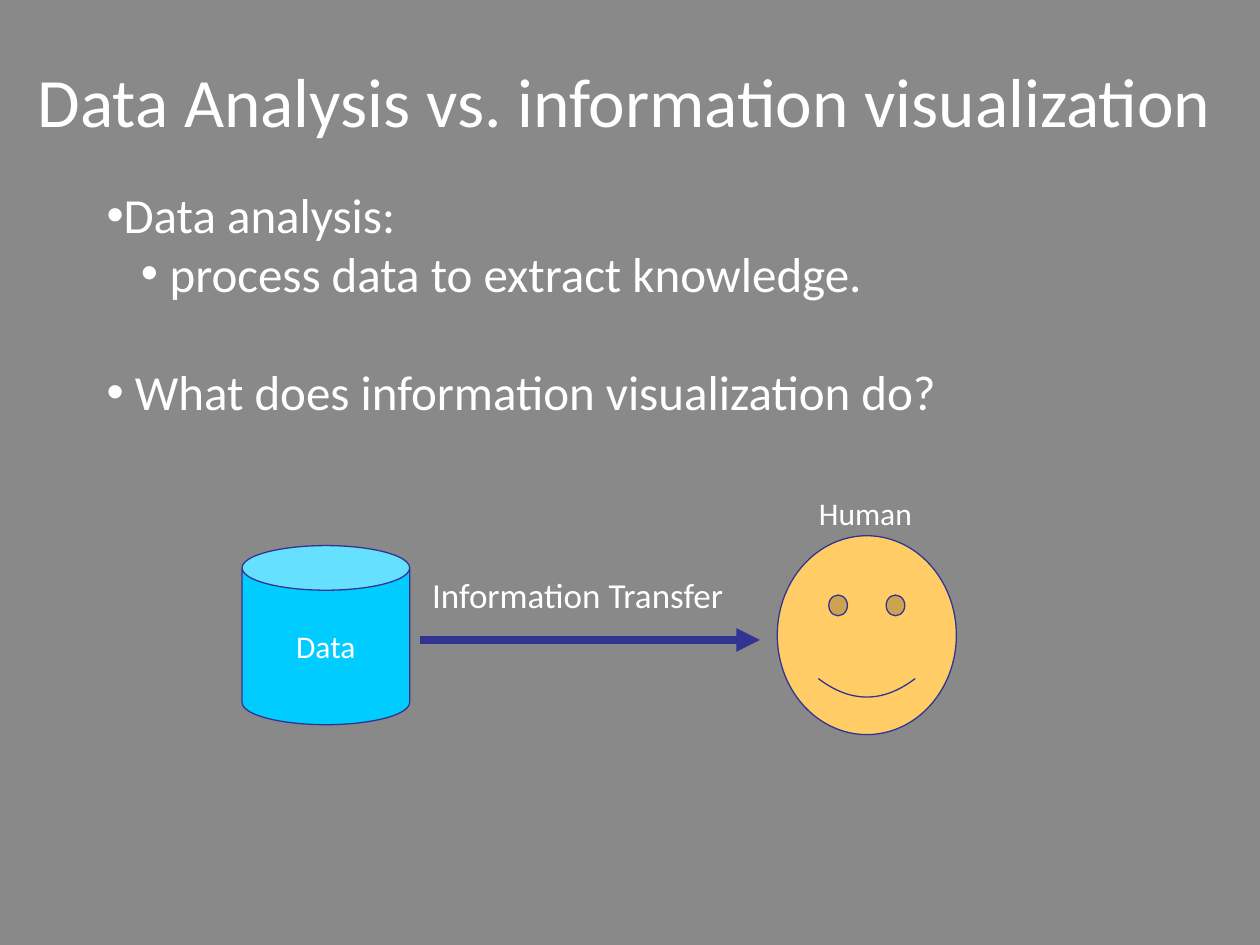
from dataclasses import dataclass

from pptx import Presentation
from pptx.dml.color import RGBColor as RGB
from pptx.enum.shapes import MSO_CONNECTOR as Connector, MSO_SHAPE as Shape
from pptx.enum.text import MSO_ANCHOR as Anchor, MSO_AUTO_SIZE as AutoSize, PP_ALIGN as Align
from pptx.oxml.ns import qn
from pptx.util import Cm, Pt
from lxml.etree import SubElement


@dataclass(frozen=True)
class Theme:
    font: str = "Calibri"
    background: RGB = RGB(0x89, 0x89, 0x89)
    text: RGB = RGB(0xFF, 0xFF, 0xFF)
    outline: RGB = RGB(0x32, 0x34, 0x92)
    data: RGB = RGB(0x00, 0xCC, 0xFF)
    human: RGB = RGB(0xFF, 0xCC, 0x66)
    title_size: float = 39.6
    body_size: float = 28
    transfer_size: float = 20
    label_size: float = 18


theme = Theme()


def write(frame, text, size, align=Align.LEFT, anchor=Anchor.TOP, wrap=False,
          first=True, bullet=False, margin=0, hanging=0, before=0):
    """Write one paragraph; margin and hanging are in cm, before in points."""
    frame.word_wrap = wrap
    frame.auto_size = AutoSize.NONE
    frame.vertical_anchor = anchor
    paragraph = frame.paragraphs[0] if first else frame.add_paragraph()
    paragraph.text = text
    paragraph.alignment = align
    if before:
        paragraph.space_before = Pt(before)
    if bullet:
        props = paragraph._p.get_or_add_pPr()
        props.set("marL", str(Cm(margin)))
        props.set("indent", str(-Cm(hanging)))
        SubElement(props, qn("a:buFont"), typeface="Arial")
        SubElement(props, qn("a:buChar"), char="•")
    font = paragraph.font
    font.name, font.size = theme.font, Pt(size)
    font.color.rgb = theme.text


presentation = Presentation()
presentation.slide_width, presentation.slide_height = Cm(25.4), Cm(19.05)
slide = presentation.slides.add_slide(presentation.slide_layouts[5])
slide.background.fill.solid()
slide.background.fill.fore_color.rgb = theme.background
shapes = slide.shapes

# Title
title = shapes.title
title.left, title.top, title.width, title.height = Cm(0.2), Cm(0.43), Cm(24.77), Cm(3.18)
write(title.text_frame, "Data Analysis vs. information visualization", theme.title_size,
      align=Align.CENTER, anchor=Anchor.MIDDLE, wrap=True)

# Data store and human face
figures = []
for kind, box, fill, adjustment in (
    (Shape.CAN, (4.88, 11, 3.38, 3.61), theme.data, 0.266),
    (Shape.SMILEY_FACE, (15.67, 10.8, 3.61, 4.01), theme.human, 0.047),
):
    figure = shapes.add_shape(kind, *map(Cm, box))
    figure.adjustments[0] = adjustment
    figure.shadow.inherit = False
    figure.fill.solid()
    figure.fill.fore_color.rgb = fill
    figure.line.color.rgb = theme.outline
    figure.line.width = Pt(0.75)
    figures.append(figure)
data, human = figures
write(data.text_frame, "Data", theme.label_size, align=Align.CENTER, anchor=Anchor.MIDDLE)

# Bulleted statements
statements = shapes.add_textbox(Cm(1.9), Cm(3.6), Cm(22.66), Cm(6.25)).text_frame
for number, (text, margin, hanging, before) in enumerate((
    ("Data analysis:", 0, 0, 0),
    ("process data to extract knowledge.", 1.27, 0.58, 0),
    ("What does information visualization do?", 0.57, 0.57, 34),
)):
    write(statements, text, theme.body_size, wrap=True, first=number == 0,
          bullet=True, margin=margin, hanging=hanging, before=before)

# Transfer arrow from data to human
arrow = shapes.add_connector(Connector.STRAIGHT, Cm(8.46), Cm(12.9), Cm(15.32), Cm(12.9))
arrow.line.color.rgb = theme.outline
arrow.line.width = Pt(4.5)
SubElement(arrow.line._get_or_add_ln(), qn("a:tailEnd"), type="triangle")
SubElement(arrow._element.spPr, qn("a:effectLst"))

# Labels above the face and the arrow
for text, box, size in (
    ("Human", (16.26, 9.83, 2.41, 1.02), theme.label_size),
    ("Information Transfer", (8.46, 11.43, 6.53, 1.12), theme.transfer_size),
):
    write(shapes.add_textbox(*map(Cm, box)).text_frame, text, size)

presentation.save("out.pptx")
